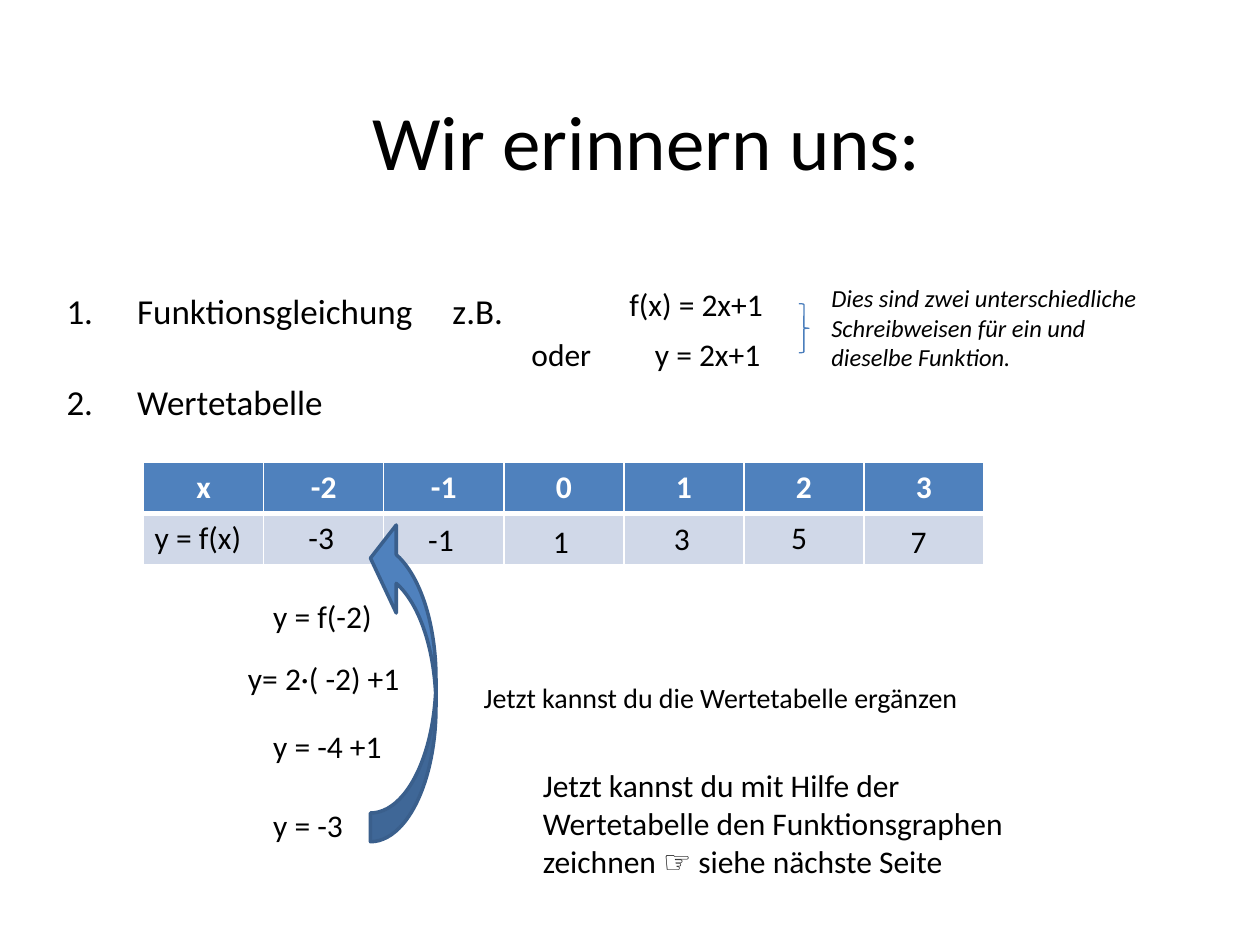
"""Build the slide that recalls function equations and value tables."""
from lxml.etree import SubElement
from pptx import Presentation
from pptx.dml.color import RGBColor
from pptx.enum.shapes import MSO_SHAPE
from pptx.enum.text import MSO_ANCHOR, PP_ALIGN
from pptx.oxml.ns import qn
from pptx.util import Inches, Pt

TITLE = "Wir erinnern uns:"
STEPS = ["Funktionsgleichung\t z.B.", "Wertetabelle"]
STEP_GAPS = [4, 28]
X_VALUES = ["x", "-2", "-1", "0", "1", "2", "3"]

NOTES = [
    (" f(x) = 2x+1", (4.84, 2.21, 1.42, 0.4), {}),
    ("oder\ty = 2x+1", (4.12, 2.61, 2.13, 0.4), {"tab": 0.98}),
    ("Dies sind zwei unterschiedliche Schreibweisen für ein und dieselbe Funktion.",
     (6.5, 2.2, 2.68, 0.81), {"size": 14, "italic": True}),
    ("Jetzt kannst du die Wertetabelle ergänzen", (3.74, 5.35, 4.02, 0.37), {"size": 16}),
    ("Jetzt kannst du mit Hilfe der Wertetabelle den Funktionsgraphen "
     "zeichnen ☞ siehe nächste Seite", (4.21, 6.03, 4.25, 1.01), {}),
]
CALCULATION = [
    ("y = f(-2)", (2.07, 4.69, 1.02, 0.4)),
    ("y= 2·( -2) +1", (1.87, 5.18, 1.43, 0.4)),
    ("y = -4 +1", (2.07, 5.72, 1.23, 0.4)),
    ("y = -3", (2.07, 6.35, 0.88, 0.4)),
]
Y_VALUES = [
    ("y = f(x)", (1.13, 4.06, 0.94, 0.4)),
    ("-3", (2.35, 4.06, 0.47, 0.4)),
    ("-1", (3.3, 4.08, 0.54, 0.4)),
    ("1", (4.29, 4.09, 0.49, 0.4)),
    ("3", (5.25, 4.07, 0.5, 0.4)),
    ("5", (6.18, 4.06, 0.49, 0.4)),
    ("7", (7.13, 4.09, 0.47, 0.4)),
]


def rgb(color):
    return RGBColor.from_string(color)


def box(values):
    return [Inches(v) for v in values]


def write(p, text, size=18, color="000000", bold=False, italic=False,
          align=PP_ALIGN.LEFT, before=0, number=False, tab=None):
    p.alignment = align
    p.space_before = Pt(before)
    pPr = p._p.get_or_add_pPr()
    if number:
        pPr.set("marL", str(Inches(0.56)))
        pPr.set("indent", str(-Inches(0.56)))
        SubElement(pPr, qn("a:buFont"), typeface="+mj-lt")
        SubElement(pPr, qn("a:buAutoNum"), type="arabicPeriod")
    if tab:
        tabs = SubElement(pPr, qn("a:tabLst"))
        SubElement(tabs, qn("a:tab"), pos=str(Inches(tab)), algn="l")
    r = p.add_run()
    r.text = text
    font = r.font
    font.name, font.size, font.bold, font.italic = "Calibri", Pt(size), bold, italic
    font.color.rgb = rgb(color)


def add_frame(s, at, anchor=MSO_ANCHOR.TOP):
    tf = s.shapes.add_textbox(*box(at)).text_frame
    tf.word_wrap = True
    tf.vertical_anchor = anchor
    return tf


def add_text(s, text, at, anchor=MSO_ANCHOR.TOP, **fmt):
    write(add_frame(s, at, anchor).paragraphs[0], text, **fmt)


def add_steps(s):
    tf = add_frame(s, (0.43, 2.25, 9, 4.95))
    for i, (text, gap) in enumerate(zip(STEPS, STEP_GAPS)):
        p = tf.add_paragraph() if i else tf.paragraphs[0]
        write(p, text, size=20, before=gap, number=True)


def style_cell(cell, fill, top, bottom):
    tcPr = cell._tc.get_or_add_tcPr()
    for side, width in (("L", 1), ("R", 1), ("T", top), ("B", bottom)):
        ln = SubElement(tcPr, qn(f"a:ln{side}"), w=str(Pt(width)))
        SubElement(SubElement(ln, qn("a:solidFill")), qn("a:srgbClr"), val="FFFFFF")
    cell.fill.solid()
    cell.fill.fore_color.rgb = rgb(fill)


def add_value_table(s):
    n = len(X_VALUES)
    table = s.shapes.add_table(2, n, *box((1.14, 3.67, 6.67, 0.81))).table
    for i, x in enumerate(X_VALUES):
        table.columns[i].width = Inches(6.67 / n)
        head, body = table.cell(0, i), table.cell(1, i)
        style_cell(head, "4F81BD", 1, 3)
        style_cell(body, "D0D8E8", 3, 1)
        write(head.text_frame.paragraphs[0], x, color="FFFFFF", bold=True,
              align=PP_ALIGN.CENTER)


def add_outline(s, kind, at, line, width, fill=None):
    sp = s.shapes.add_shape(kind, *box(at))
    sp.shadow.inherit = False
    sp.line.color.rgb = rgb(line)
    sp.line.width = Pt(width)
    if fill:
        sp.fill.solid()
        sp.fill.fore_color.rgb = rgb(fill)
    else:
        sp.fill.background()
    return sp


def main():
    prs = Presentation()
    prs.slide_width, prs.slide_height = Inches(10), Inches(7.5)
    s = prs.slides.add_slide(prs.slide_layouts[6])
    add_text(s, TITLE, (1.56, 0.44, 7.15, 1.34), MSO_ANCHOR.MIDDLE,
             size=44, align=PP_ALIGN.CENTER)
    add_steps(s)
    add_value_table(s)
    add_outline(s, MSO_SHAPE.RIGHT_BRACE, (6.34, 2.41, 0.08, 0.39), "4B7EBC", 0.75)
    for text, at, fmt in NOTES:
        add_text(s, text, at, **fmt)
    for text, at in CALCULATION:
        add_text(s, text, at)
    arrow = add_outline(s, MSO_SHAPE.CURVED_UP_ARROW, (1.9, 5.12, 2.6, 0.52),
                        "3A5F8C", 2, "4F81BD")
    arrow.rotation = 270
    for i, value in enumerate((0.438, 1.343, 0.394)):
        arrow.adjustments[i] = value
    for text, at in Y_VALUES:
        add_text(s, text, at)
    prs.save("out.pptx")


if __name__ == "__main__":
    main()
